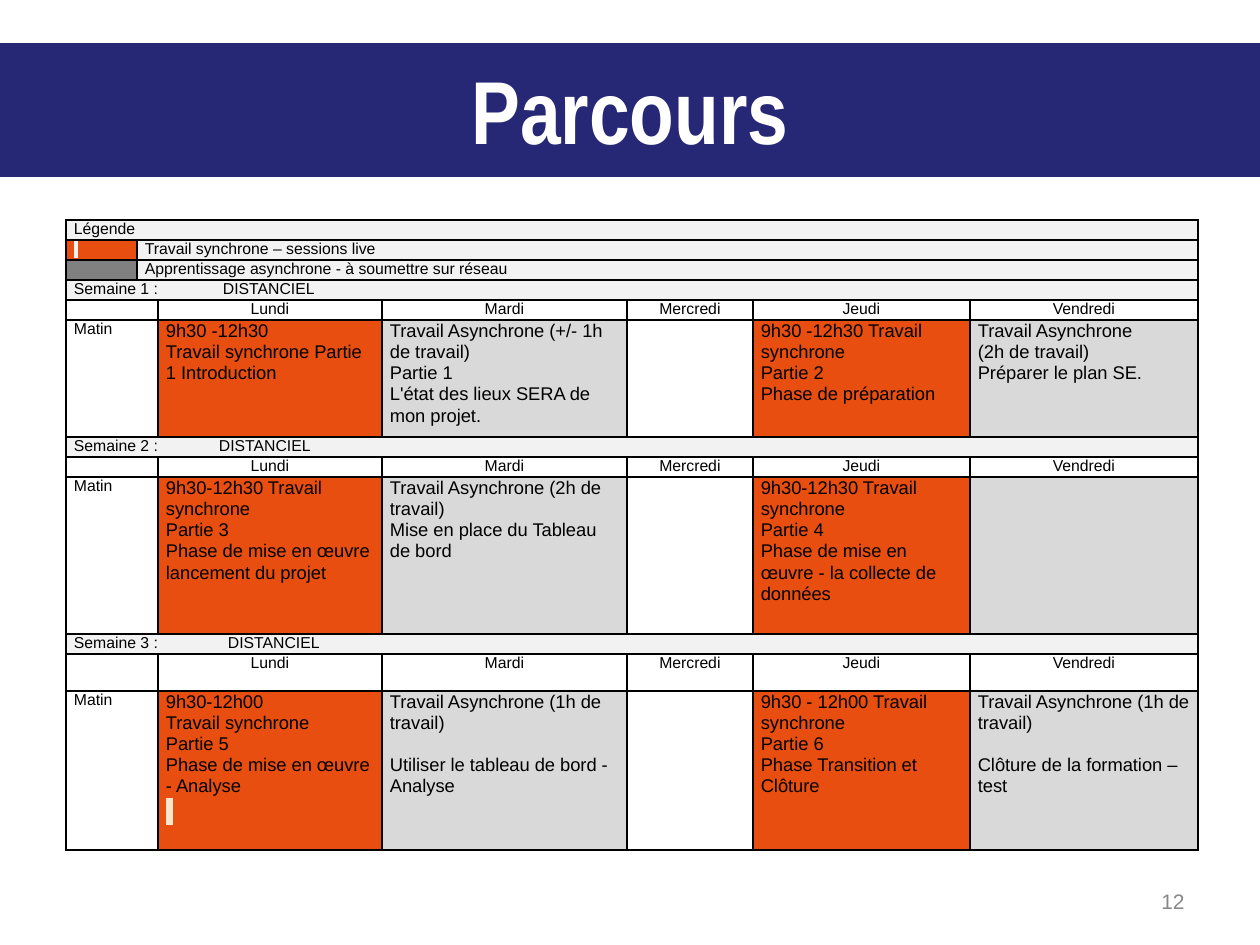
from dataclasses import dataclass
from typing import Optional

from lxml import etree
from pptx import Presentation
from pptx import util as u
from pptx.dml.color import RGBColor
from pptx.enum import shapes, text
from pptx.oxml import ns

PX = 914400 / 126
NAVY = RGBColor(0x26, 0x27, 0x75)
ORANGE = RGBColor(0xE8, 0x4E, 0x0F)
GRAY = RGBColor(0x80, 0x80, 0x80)
SILVER = RGBColor(0xD9, 0xD9, 0xD9)
PALE = RGBColor(0xF2, 0xF2, 0xF2)
CREAM = RGBColor(0xFC, 0xE5, 0xCD)
MUTED = RGBColor(0x88, 0x88, 0x88)
WHITE = RGBColor(0xFF, 0xFF, 0xFF)
BLACK = RGBColor(0, 0, 0)

LEFT, CENTER, RIGHT = text.PP_ALIGN.LEFT, text.PP_ALIGN.CENTER, text.PP_ALIGN.RIGHT
COLS = [71, 21, 224, 245, 126, 217, 228]
ROWS = [20, 20, 20, 20, 20, 117, 20, 20, 157, 20, 37, 159]
DAYS = ["Lundi", "Mardi", "Mercredi", "Jeudi", "Vendredi"]


@dataclass(frozen=True)
class Para:
    words: str
    size: float = 9
    align: text.PP_ALIGN = LEFT
    before: float = 0
    highlight: Optional[RGBColor] = None
    tab: int = 0


@dataclass(frozen=True)
class Session:
    day: int
    fill: RGBColor
    paras: tuple[Para, ...] = ()


@dataclass(frozen=True)
class Week:
    number: int
    tab: int
    sessions: tuple[Session, ...]


def px(n: int) -> u.Emu:
    return u.Emu(round(n * PX))


def body(*lines: str) -> tuple[Para, ...]:
    return tuple(Para(line, 10.5) for line in lines)


def spaced(first: str, second: str) -> tuple[Para, ...]:
    return Para(first, 10.5), Para(second, 10.5, before=12)


WEEKS = [
    Week(1, 149, (
        Session(0, ORANGE, body("9h30 -12h30", "Travail synchrone Partie 1 Introduction")),
        Session(1, SILVER, body("Travail Asynchrone (+/- 1h de travail)", "Partie 1",
                                "L'état des lieux SERA de mon projet.")),
        Session(3, ORANGE, body("9h30 -12h30 Travail synchrone", "Partie 2",
                                "Phase de préparation")),
        Session(4, SILVER, body("Travail Asynchrone", "(2h de travail)",
                                "Préparer le plan SE.")))),
    Week(2, 145, (
        Session(0, ORANGE, body("9h30-12h30 Travail synchrone", "Partie 3",
                                "Phase de mise en œuvre lancement du projet")),
        Session(1, SILVER, body("Travail Asynchrone (2h de travail)",
                                "Mise en place du Tableau de bord")),
        Session(3, ORANGE, body("9h30-12h30 Travail synchrone", "Partie 4",
                                "Phase de mise en œuvre - la collecte de données")),
        Session(4, SILVER))),
    Week(3, 154, (
        Session(0, ORANGE, body("9h30-12h00", "Travail synchrone", "Partie 5",
                                "Phase de mise en œuvre - Analyse")
                + (Para(" ", 14, highlight=CREAM),)),
        Session(1, SILVER, spaced("Travail Asynchrone (1h de travail)",
                                  "Utiliser le tableau de bord - Analyse")),
        Session(3, ORANGE, body("9h30 - 12h00 Travail synchrone", "Partie 6",
                                "Phase Transition et Clôture")),
        Session(4, SILVER, spaced("Travail Asynchrone (1h de travail)",
                                  "Clôture de la formation – test")))),
]


def add_run(p, words: str, size: float, color: RGBColor, font: str = "Arial"):
    r = p.add_run()
    r.text = words
    r.font.size = u.Pt(size)
    r.font.name = font
    r.font.color.rgb = color
    return r


def add_highlight(r, color: RGBColor) -> None:
    mark = etree.Element(ns.qn("a:highlight"))
    etree.SubElement(mark, ns.qn("a:srgbClr"), val=str(color))
    r.font._element.find(ns.qn("a:solidFill")).addnext(mark)


def style_cell(cell) -> None:
    tc_pr = cell._tc.get_or_add_tcPr()
    for side in ("lnL", "lnR", "lnT", "lnB"):
        ln = etree.SubElement(tc_pr, ns.qn(f"a:{side}"), w=str(u.Pt(1)))
        fill = etree.SubElement(ln, ns.qn("a:solidFill"))
        etree.SubElement(fill, ns.qn("a:srgbClr"), val=str(BLACK))
    cell.margin_left = cell.margin_right = px(8)
    cell.margin_top = cell.margin_bottom = 0
    cell.fill.solid()
    cell.fill.fore_color.rgb = WHITE
    etree.SubElement(cell.text_frame.paragraphs[0]._p, ns.qn("a:endParaRPr"), sz="900")


def fill_cell(cell, paras: tuple[Para, ...], fill: RGBColor = WHITE) -> None:
    cell.fill.fore_color.rgb = fill
    tf = cell.text_frame
    for i, para in enumerate(paras):
        p = tf.add_paragraph() if i else tf.paragraphs[0]
        p.alignment = para.align
        p.line_spacing = 1.04
        if para.before:
            p.space_before = u.Pt(para.before)
        if para.tab:
            tabs = etree.SubElement(p._p.get_or_add_pPr(), ns.qn("a:tabLst"))
            etree.SubElement(tabs, ns.qn("a:tab"), pos=str(px(para.tab)), algn="l")
        r = add_run(p, para.words, para.size, BLACK)
        if para.highlight is not None:
            add_highlight(r, para.highlight)


def fill_band(table, row: int, first: int, para: Para) -> None:
    cell = table.cell(row, first)
    cell.merge(table.cell(row, len(COLS) - 1))
    fill_cell(cell, (para,), PALE)


def fill_week(table, week: Week, row: int) -> None:
    fill_band(table, row, 0, Para(f"Semaine {week.number} :\tDISTANCIEL", tab=week.tab))
    for offset in (1, 2):
        table.cell(row + offset, 0).merge(table.cell(row + offset, 1))
    for i, day in enumerate(DAYS):
        fill_cell(table.cell(row + 1, i + 2), (Para(day, align=CENTER),))
    fill_cell(table.cell(row + 2, 0), (Para("Matin"),))
    for session in week.sessions:
        fill_cell(table.cell(row + 2, session.day + 2), session.paras, session.fill)


def add_schedule(s) -> None:
    table = s.shapes.add_table(len(ROWS), len(COLS), px(66), px(220),
                               px(sum(COLS)), px(sum(ROWS))).table
    table.first_row = table.horz_banding = False
    for col, width in zip(table.columns, COLS):
        col.width = px(width)
    for row, height in zip(table.rows, ROWS):
        row.height = px(height)
    for cell in table.iter_cells():
        style_cell(cell)
    fill_band(table, 0, 0, Para("Légende"))
    fill_cell(table.cell(1, 0), (Para(" ", highlight=PALE),), ORANGE)
    fill_band(table, 1, 1, Para("Travail synchrone – sessions live"))
    fill_cell(table.cell(2, 0), (), GRAY)
    fill_band(table, 2, 1, Para("Apprentissage asynchrone - à soumettre sur réseau"))
    for i, week in enumerate(WEEKS):
        fill_week(table, week, 3 + 3 * i)


def add_title(s) -> None:
    sp = s.shapes.add_shape(shapes.MSO_SHAPE.RECTANGLE, 0, px(43), px(1260), px(134))
    sp.shadow.inherit = False
    sp.fill.solid()
    sp.fill.fore_color.rgb = NAVY
    sp.line.fill.background()
    tf = sp.text_frame
    tf.margin_top = tf.margin_bottom = u.Inches(0.1)
    tf.vertical_anchor = text.MSO_ANCHOR.TOP
    p = tf.paragraphs[0]
    p.alignment = CENTER
    add_run(p, "Parcours", 51, WHITE, "Arial Narrow").font.bold = True


def add_page_number(s) -> None:
    tf = s.shapes.add_textbox(px(903), px(876), px(294), px(50)).text_frame
    tf.word_wrap = True
    tf.vertical_anchor = text.MSO_ANCHOR.MIDDLE
    p = tf.paragraphs[0]
    p.alignment = RIGHT
    add_run(p, "12", 12, MUTED)


def main() -> None:
    prs = Presentation()
    prs.slide_width, prs.slide_height = px(1260), px(945)
    s = prs.slides.add_slide(prs.slide_layouts[6])
    add_page_number(s)
    add_title(s)
    add_schedule(s)
    prs.save("out.pptx")


if __name__ == "__main__":
    main()
